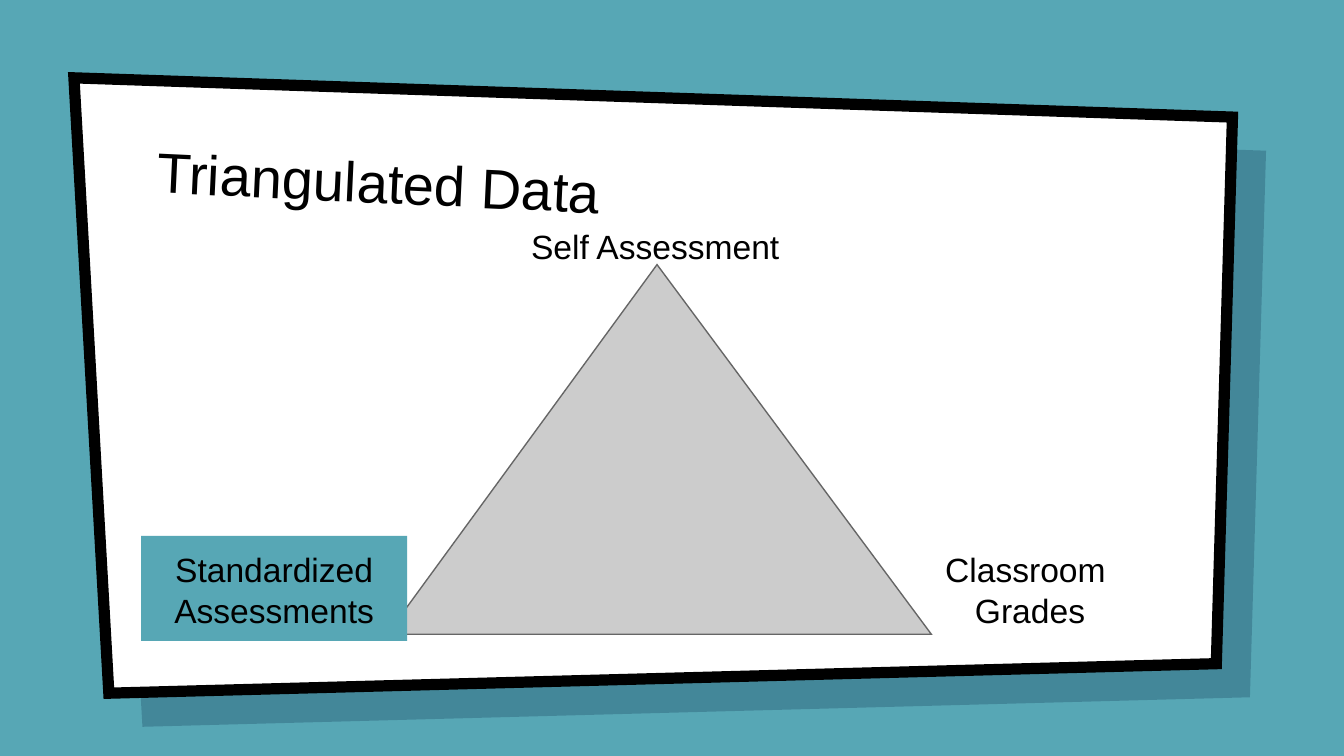
"""Build the Triangulated Data slide."""
from dataclasses import dataclass

import lxml.etree
import pptx
import pptx.dml.color
import pptx.enum.shapes
import pptx.enum.text
import pptx.oxml
import pptx.oxml.ns
import pptx.util

WIDE = pptx.util.Inches(10)
HIGH = pptx.util.Inches(5.625)
TEAL, BLACK, WHITE = "57A7B5", "000000", "FFFFFF"
FRAME = [(5.5, 10.3), (91.7, 15.5), (90.5, 87.8), (8.1, 91.7)]
SHIFT = (2.5, 4.45)
KINDS = pptx.enum.shapes.MSO_SHAPE
ALIGN = pptx.enum.text.PP_ALIGN
ANCHOR = pptx.enum.text.MSO_ANCHOR


@dataclass
class Label:
    """Text in a box whose place is in percent of the slide."""
    lines: list[str]
    left: float
    top: float
    width: float
    height: float
    size: int = 18
    align: ALIGN = ALIGN.CENTER
    anchor: ANCHOR = ANCHOR.TOP
    turn: float = 0
    fill: str = ""


LABELS = [
    Label(["Triangulated Data"], 10.7, 17.1, 76.9, 14.8, 30,
          ALIGN.LEFT, ANCHOR.BOTTOM, 2.7),
    Label(["Self Assessment"], 37, 28.1, 23.5, 12.4),
    Label(["Classroom", " Grades"], 66.1, 70.9, 20.4, 12.4),
    Label(["Standardized Assessments"], 10.5, 70.9, 19.8, 13.9, fill=TEAL),
]


def across(share: float) -> int:
    """Turn a percent of the slide's width into a length."""
    return round(WIDE * share / 100)


def down(share: float) -> int:
    """Turn a percent of the slide's height into a length."""
    return round(HIGH * share / 100)


def place(left: float, top: float, width: float, height: float) -> tuple:
    """Turn a box in percent into lengths."""
    return across(left), down(top), across(width), down(height)


def paint(form, tint: str) -> None:
    """Give a fill or a font a solid colour."""
    if hasattr(form, "solid"):
        form.solid()
        form = form.fore_color
    else:
        form = form.color
    form.rgb = pptx.dml.color.RGBColor.from_string(tint)


def style(shape, fill: str, line: str = "", weight: float = 0) -> None:
    """Set fill and outline and drop the shadow."""
    shape.shadow.inherit = False
    paint(shape.fill, fill)
    if line:
        paint(shape.line.fill, line)
        shape.line.width = pptx.util.Pt(weight)
        edge = shape.line.fill._xPr
        lxml.etree.SubElement(edge, pptx.oxml.ns.qn("a:miter"), lim="800000")
    else:
        shape.line.fill.background()


def panel(slide, shift: tuple[float, float]):
    """Draw the slanted frame, moved by a shift in percent."""
    spots = [(across(x + shift[0]), down(y + shift[1])) for x, y in FRAME]
    pen = slide.shapes.build_freeform(*spots[0])
    pen.add_line_segments(spots[1:], close=True)
    return pen.convert_to_shape()


def fade(shape, share: int) -> None:
    """Set the opacity of a solid fill in percent."""
    tint = shape.fill._xPr.find(".//" + pptx.oxml.ns.qn("a:srgbClr"))
    lxml.etree.SubElement(tint, pptx.oxml.ns.qn("a:alpha"), val=str(share * 1000))


def write(slide, label: Label) -> None:
    """Draw one label."""
    spot = place(label.left, label.top, label.width, label.height)
    if label.fill:
        shape = slide.shapes.add_shape(KINDS.RECTANGLE, *spot)
        style(shape, label.fill)
    else:
        shape = slide.shapes.add_textbox(*spot)
    shape.rotation = label.turn
    frame = shape.text_frame
    frame.word_wrap = True
    frame.vertical_anchor = label.anchor
    pad = pptx.util.Inches(0.1)
    frame.margin_left = frame.margin_right = pad
    frame.margin_top = frame.margin_bottom = pad
    for row, line in enumerate(label.lines):
        para = frame.add_paragraph() if row else frame.paragraphs[0]
        para.alignment = label.align
        run = para.add_run()
        run.text = line
        run.font.name = "Arial"
        run.font.size = pptx.util.Pt(label.size)
        paint(run.font, BLACK)


def main() -> None:
    """Build and save the deck."""
    deck = pptx.Presentation()
    deck.slide_width, deck.slide_height = WIDE, HIGH
    slide = deck.slides.add_slide(deck.slide_layouts[6])
    paint(slide.background.fill, TEAL)
    shade = panel(slide, SHIFT)
    style(shade, "001936")
    fade(shade, 22)
    style(panel(slide, (0, 0)), WHITE, BLACK, 6)
    title, *notes = LABELS
    write(slide, title)
    spot = place(28.8, 35, 40.5, 48.9)
    peak = slide.shapes.add_shape(KINDS.ISOSCELES_TRIANGLE, *spot)
    peak.adjustments[0] = 0.496
    style(peak, "CCCCCC", "666666", 0.75)
    for label in notes:
        write(slide, label)
    deck.save("out.pptx")


if __name__ == "__main__":
    main()
